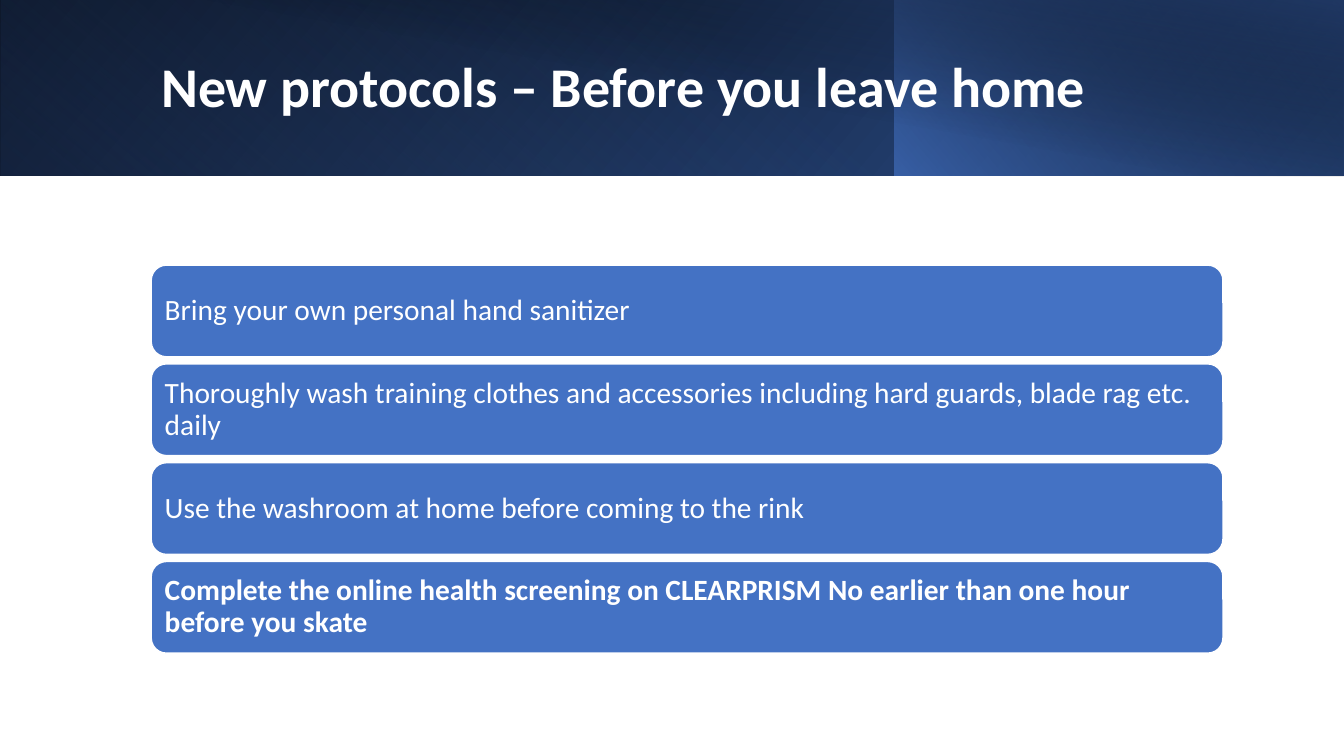
from dataclasses import dataclass

from lxml import etree
from pptx import Presentation
from pptx.dml.color import RGBColor
from pptx.enum.shapes import MSO_SHAPE
from pptx.enum.text import MSO_ANCHOR, PP_ALIGN
from pptx.oxml.ns import qn
from pptx.util import Inches, Pt

RECTANGLE = MSO_SHAPE.RECTANGLE
ROUNDED = MSO_SHAPE.ROUNDED_RECTANGLE
MIDDLE = MSO_ANCHOR.MIDDLE
LEFT = PP_ALIGN.LEFT


@dataclass(frozen=True)
class Theme:
    font: str = "Calibri"
    title_size: int = 40
    step_size: int = 21
    white: str = "FFFFFF"
    black: str = "000000"
    blue: str = "4472C4"
    mid_blue: str = "2F5597"
    navy: str = "203864"


theme = Theme()


def fill_gradient(shape, stops, angle):
    """Fill with (position %, colour, opacity %) stops along a clockwise angle."""
    shape.fill.gradient()
    gradient = shape._element.spPr.find(qn("a:gradFill"))
    for child in list(gradient):
        gradient.remove(child)
    stop_list = etree.SubElement(gradient, qn("a:gsLst"))
    for position, color, opacity in stops:
        stop = etree.SubElement(stop_list, qn("a:gs"), pos=str(position * 1000))
        rgb = etree.SubElement(stop, qn("a:srgbClr"), val=color)
        if opacity < 100:
            etree.SubElement(rgb, qn("a:alpha"), val=str(opacity * 1000))
    etree.SubElement(gradient, qn("a:lin"), ang=str(angle * 60000), scaled="0")


def write_text(shape, text, size, bold):
    frame = shape.text_frame
    frame.word_wrap = True
    frame.vertical_anchor = MIDDLE
    paragraph = frame.paragraphs[0]
    paragraph.text = text
    paragraph.alignment = LEFT
    paragraph.line_spacing = 0.9
    paragraph.font.name = theme.font
    paragraph.font.size = Pt(size)
    paragraph.font.bold = bold
    paragraph.font.color.rgb = RGBColor.from_string(theme.white)


presentation = Presentation()
presentation.slide_width = Inches(13.33)
presentation.slide_height = Inches(7.5)
slide = presentation.slides.add_slide(presentation.slide_layouts[6])

# Header band: translucent gradients layered over a dark base
# left, width, height, rotation, flipped, angle, stops
header_layers = [
    (0, 13.33, 1.74, 0, True, 140, [(0, theme.black, 100), (100, theme.mid_blue, 100)]),
    (0, 8.88, 1.74, 180, True, 230, [(20, theme.blue, 0), (100, theme.navy, 55)]),
    (8.87, 4.46, 1.74, 0, True, 220, [(0, theme.blue, 66), (100, theme.black, 30)]),
    (0.5, 12.83, 1.75, 0, False, 280, [(50, theme.black, 0), (99, theme.navy, 52)]),
]
for left, width, height, rotation, flipped, angle, stops in header_layers:
    layer = slide.shapes.add_shape(
        RECTANGLE, Inches(left), 0, Inches(width), Inches(height))
    layer.shadow.inherit = False
    layer.line.fill.background()
    layer.rotation = rotation
    if flipped:
        layer._element.spPr.find(qn("a:xfrm")).set("flipH", "1")
    fill_gradient(layer, stops, angle)

title = slide.shapes.add_textbox(Inches(1.5), Inches(0.32), Inches(10.82), Inches(1.13))
write_text(title, "New protocols – Before you leave home", theme.title_size, True)

# Steps to take at home, stacked at an equal pitch
steps = [
    ("Bring your own personal hand sanitizer", False),
    ("Thoroughly wash training clothes and accessories including hard guards, "
     "blade rag etc. daily", False),
    ("Use the washroom at home before coming to the rink", False),
    ("Complete the online health screening on CLEARPRISM No earlier than one hour "
     "before you skate", True),
]
first_top, pitch = 2.63, 0.98
for index, (instruction, bold) in enumerate(steps):
    step = slide.shapes.add_shape(
        ROUNDED, Inches(1.5), Inches(first_top + index * pitch),
        Inches(10.63), Inches(0.91))
    step.shadow.inherit = False
    step.fill.solid()
    step.fill.fore_color.rgb = RGBColor.from_string(theme.blue)
    step.line.color.rgb = RGBColor.from_string(theme.white)
    step.line.width = Pt(1)
    write_text(step, instruction, theme.step_size, bold)
    step.text_frame.margin_left = step.text_frame.margin_right = Inches(0.09)

presentation.save("out.pptx")
